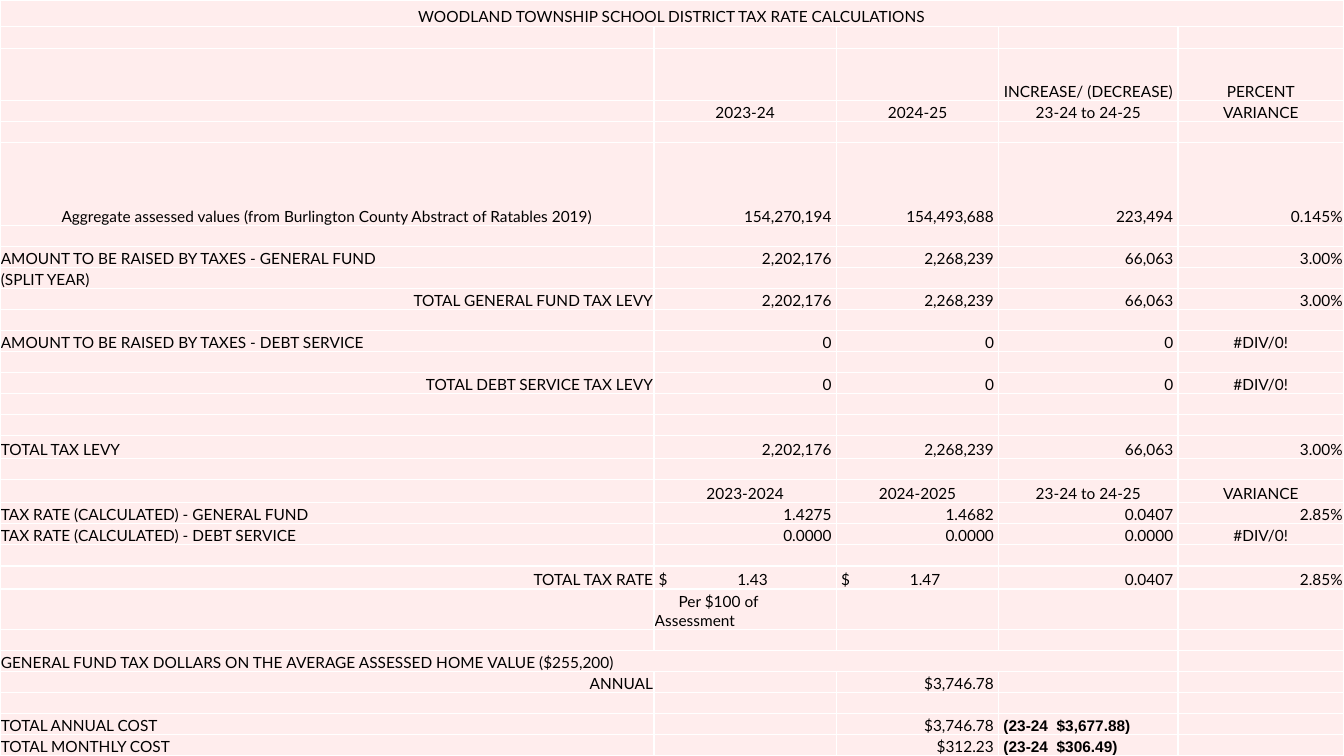
import pptx
import pptx.dml.color
import pptx.enum.text
import pptx.oxml
import pptx.oxml.ns
import pptx.util

Cm, Pt = pptx.util.Cm, pptx.util.Pt
ALIGN = pptx.enum.text.PP_ALIGN
ALIGNMENTS = {"l": ALIGN.LEFT, "c": ALIGN.CENTER, "r": ALIGN.RIGHT}

COLUMN_WIDTHS = (16.48, 4.6, 4.09, 4.52, 4.17)
ROW_HEIGHT = 0.53
TALLER_ROWS = {0: 0.66, 1: 0.56, 2: 1.32, 5: 2.08, 16: 0.58, 18: 0.58,
               22: 0.58, 23: 1.02}
MERGED = {0: 5, 25: 4}  # row: number of columns joined
DOLLAR_TABS = {1: 2.75, 2: 2.5}  # column: where the amount ends
FONT, SIZE, INK, PINK, WHITE = "Lato", 11, "000000", "FFEDED", "FFFFFF"

# Alignment of the label, the label, then the values of the other columns.
BLANK = ("l", "")
ROWS = [
    ("c", "WOODLAND TOWNSHIP SCHOOL DISTRICT TAX RATE CALCULATIONS"),
    BLANK,
    ("l", "", "", "", "INCREASE/ (DECREASE)", "PERCENT"),
    ("l", "", "2023-24", "2024-25", "23-24 to 24-25", "VARIANCE"),
    BLANK,
    ("c", "Aggregate assessed values (from Burlington County Abstract of Ratables 2019)",
     "154,270,194", "154,493,688", "223,494", "0.145%"),
    BLANK,
    ("l", "AMOUNT TO BE RAISED BY TAXES - GENERAL FUND",
     "2,202,176", "2,268,239", "66,063", "3.00%"),
    ("l", "(SPLIT YEAR)"),
    ("r", "TOTAL GENERAL FUND TAX LEVY", "2,202,176", "2,268,239", "66,063", "3.00%"),
    BLANK,
    ("l", "AMOUNT TO BE RAISED BY TAXES - DEBT SERVICE", "0", "0", "0", "#DIV/0!"),
    BLANK,
    ("r", "TOTAL DEBT SERVICE TAX LEVY", "0", "0", "0", "#DIV/0!"),
    BLANK,
    BLANK,
    ("l", "TOTAL TAX LEVY", "2,202,176", "2,268,239", "66,063", "3.00%"),
    BLANK,
    ("l", "", "2023-2024", "2024-2025", "23-24 to 24-25", "VARIANCE"),
    ("l", "TAX RATE (CALCULATED) - GENERAL FUND", "1.4275", "1.4682", "0.0407", "2.85%"),
    ("l", "TAX RATE (CALCULATED) - DEBT SERVICE", "0.0000", "0.0000", "0.0000", "#DIV/0!"),
    BLANK,
    ("r", "TOTAL TAX RATE", "$\t1.43", "$\t1.47", "0.0407", "2.85%"),
    ("l", "", "Per $100 of Assessment"),
    BLANK,
    ("l", [("GENERAL FUND", True), (" TAX DOLLARS ON THE", False),
           (" AVERAGE ASSESSED HOME", True), (" VALUE ($255,200)", False)]),
    ("r", "ANNUAL", "", "$3,746.78"),
    BLANK,
    ("l", "TOTAL ANNUAL COST", "", "$3,746.78", "(23-24  $3,677.88)"),
    ("l", "TOTAL MONTHLY COST", "", "$312.23", "(23-24  $306.49)"),
]


def rgb(value):
    return pptx.dml.color.RGBColor.from_string(value)


def value_alignment(text):
    """Amounts go right, headings and errors centre, notes left."""
    if "\t" in text or text.startswith(("Per ", "(")):
        return "l"
    return "r" if text.strip("$%").replace(",", "").replace(".", "").isdigit() else "c"


def add_element(parent, xml):
    parent.append(pptx.oxml.parse_xml(
        xml.replace(" ", f' {pptx.oxml.ns.nsdecls("a")} ', 1)))


def style_cell(cell):
    properties = cell._tc.get_or_add_tcPr()
    for side in ("lnL", "lnR", "lnT", "lnB"):
        add_element(properties, f'<a:{side} w="12700"><a:solidFill>'
                    f'<a:srgbClr val="{WHITE}"/></a:solidFill></a:{side}>')
    cell.fill.solid()
    cell.fill.fore_color.rgb = rgb(PINK)
    cell.vertical_anchor = pptx.enum.text.MSO_ANCHOR.BOTTOM
    cell.margin_left = cell.margin_right = cell.margin_top = Cm(0.02)
    cell.margin_bottom = 0


def write_cell(cell, content, alignment, column):
    para = cell.text_frame.paragraphs[0]
    if not content:
        add_element(para._p, f'<a:endParaRPr sz="{SIZE * 100}"/>')
        return
    para.alignment = ALIGNMENTS[alignment]
    para.font.name, para.font.size = FONT, Pt(SIZE)
    para.font.color.rgb = rgb(INK)
    spans = [(content, False)] if isinstance(content, str) else content
    for text, underlined in spans:
        span = para.add_run()
        span.text = text
        if underlined:
            span.font.underline = True

    if alignment == "r" and 0 < column < 4:
        cell.margin_right = Cm(0.12)
    if "\t" in spans[0][0]:
        cell.margin_left = Cm(0.12)
        properties = para._p.get_or_add_pPr()
        tabs = pptx.oxml.parse_xml(
            f'<a:tabLst {pptx.oxml.ns.nsdecls("a")}>'
            f'<a:tab pos="{Cm(DOLLAR_TABS[column])}" algn="r"/></a:tabLst>')
        properties.insert(0, tabs)
    elif column and content.startswith("Per "):
        para._p.get_or_add_pPr().set("indent", str(Cm(0.6)))
    elif column and content.startswith("("):
        cell.margin_left = Cm(0.12)
        para.font.name, para.font.bold = "Arial", True


def main():
    deck = pptx.Presentation()
    deck.slide_width, deck.slide_height = Cm(33.87), Cm(19.05)
    page = deck.slides.add_slide(deck.slide_layouts[6])
    table = page.shapes.add_table(len(ROWS), len(COLUMN_WIDTHS), 0, 0,
                                  deck.slide_width, deck.slide_height).table
    table.first_row = table.horz_banding = False
    for column, width in zip(table.columns, COLUMN_WIDTHS):
        column.width = Cm(width)

    for row, (label_alignment, *contents) in enumerate(ROWS):
        table.rows[row].height = Cm(TALLER_ROWS.get(row, ROW_HEIGHT))
        contents += [""] * (len(COLUMN_WIDTHS) - len(contents))
        for column, content in enumerate(contents):
            cell = table.cell(row, column)
            style_cell(cell)
            alignment = value_alignment(content) if column else label_alignment
            write_cell(cell, content, alignment, column)
    for row, count in MERGED.items():
        table.cell(row, 0).merge(table.cell(row, count - 1))

    deck.save("out.pptx")


if __name__ == "__main__":
    main()
